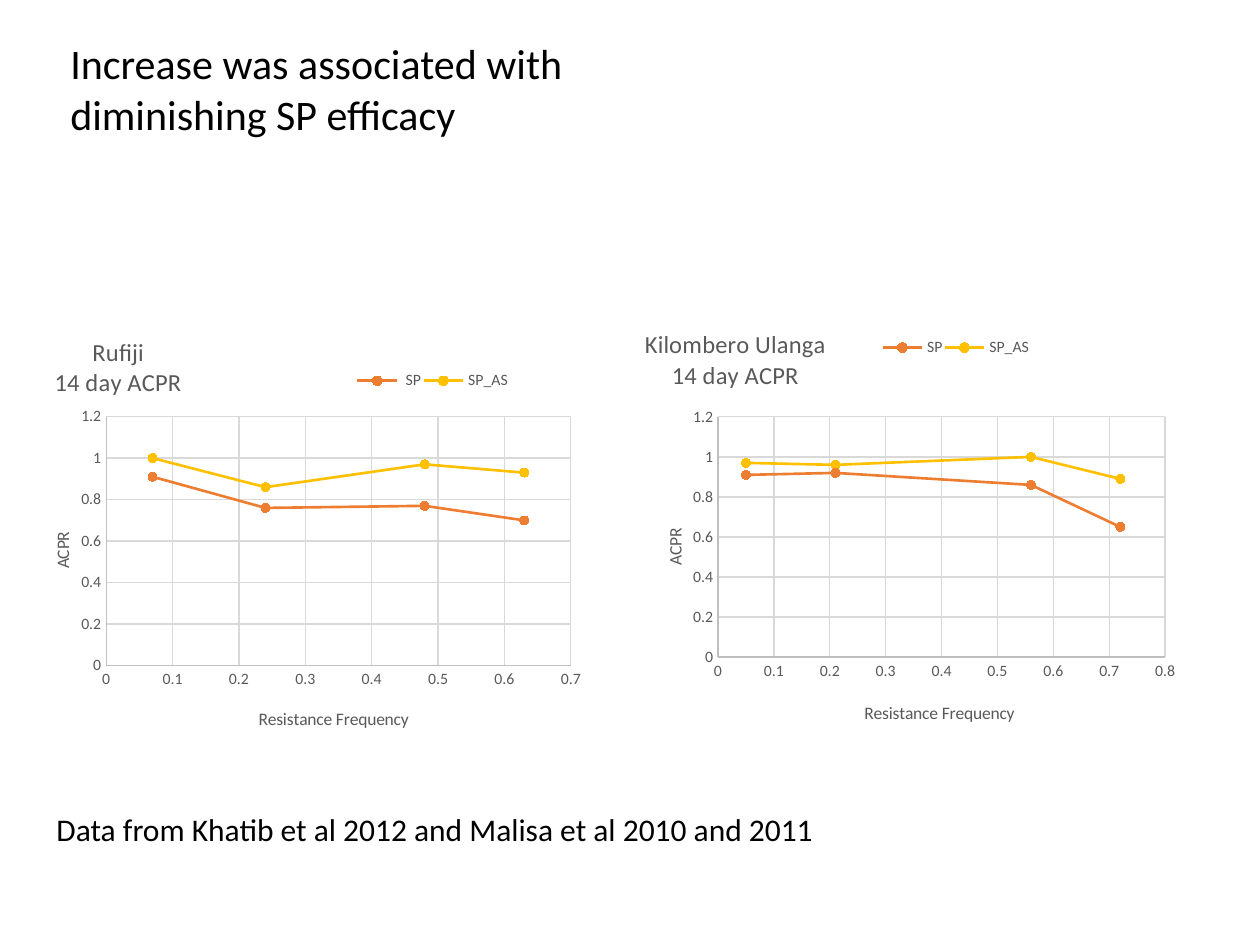
"""Build the slide comparing SP efficacy with resistance frequency at two sites."""
from lxml.etree import SubElement
from pptx import Presentation
from pptx.chart.data import XyChartData
from pptx.dml.color import RGBColor
from pptx.enum.chart import XL_CHART_TYPE, XL_LEGEND_POSITION, XL_MARKER_STYLE, XL_TICK_MARK
from pptx.enum.text import MSO_AUTO_SIZE
from pptx.oxml.ns import qn
from pptx.util import Inches, Pt

THEME = {
    "font": "Calibri",
    "ink": "000000", "label": "595959", "axis": "BFBFBF", "grid": "D9D9D9",
    "series": ("ED7D31", "FFC000"),
    "heading": 24, "source": 18, "chart_title": 14, "axis_title": 10, "tick": 9,
}
TEXTS = [
    ("Increase was associated with diminishing SP efficacy", (0.46, 0.25, 5, 0.91), "heading", True),
    ("Data from Khatib et al 2012 and Malisa et al 2010 and 2011", (0.35, 6.38, 7, 0.37), "source", False),
]
AXIS_TITLES = {"x": ("Resistance Frequency", (0.415, 0.825)), "y": ("ACPR", (0.055, 0.457))}
CHARTS = [
    {
        "title": "Kilombero Ulanga\n14 day ACPR",
        "frame": (5, 2.46, 4.42, 3.74),
        "frequency": (0.05, 0.21, 0.56, 0.72),
        "series": {"SP": (0.91, 0.92, 0.86, 0.65), "SP_AS": (0.97, 0.96, 1, 0.89)},
        "x_max": 0.8,
        "title_at": (0.02, 0.03),
        "legend_at": (0.45, 0.05, 0.27, 0.06),
        "plot_at": (0.158, 0.227, 0.803, 0.51),
    },
    {
        "title": "Rufiji\n14 day ACPR",
        "frame": (0.13, 2.46, 4.57, 3.8),
        "frequency": (0.07, 0.24, 0.48, 0.63),
        "series": {" SP": (0.91, 0.76, 0.77, 0.7), "SP_AS": (1, 0.86, 0.97, 0.93)},
        "x_max": 0.7,
        "title_at": (0.06, 0.045),
        "legend_at": (0.588, 0.118, 0.27, 0.06),
        "plot_at": (0.156, 0.223, 0.807, 0.52),
    },
]


def style_font(font, size, color):
    font.name = THEME["font"]
    font.size = Pt(THEME[size])
    font.bold = False
    font.color.rgb = RGBColor.from_string(THEME[color])


def style_line(line, color, width):
    line.color.rgb = RGBColor.from_string(color)
    line.width = Pt(width)


def add_text(page, text, *, frame, size, wrap):
    box = page.shapes.add_textbox(*map(Inches, frame))
    box.text_frame.word_wrap = wrap
    box.text_frame.auto_size = MSO_AUTO_SIZE.SHAPE_TO_FIT_TEXT
    span = box.text_frame.paragraphs[0].add_run()
    span.text = text
    style_font(span.font, size, "ink")


def set_layout(element, position, previous=None):
    for old in element.findall(qn("c:layout")):
        element.remove(old)
    layout = SubElement(element, qn("c:layout"))
    manual = SubElement(layout, qn("c:manualLayout"))
    settings = [("layoutTarget", "inner")] if previous is None else []
    settings += [("xMode", "edge"), ("yMode", "edge"), *zip("xywh", position)]
    for name, value in settings:
        SubElement(manual, qn(f"c:{name}")).set("val", str(value))
    if previous is None:
        element.insert(0, layout)
    else:
        element.find(qn(previous)).addnext(layout)


def set_title(title, text, *, size, position):
    title.text_frame.text = text
    for para in title.text_frame.paragraphs:
        for span in para.runs:
            style_font(span.font, size, "label")
    set_layout(title._element, position, "c:tx")


def format_axis(axis, name, *, maximum, step):
    text, position = AXIS_TITLES[name]
    set_title(axis.axis_title, text, size="axis_title", position=position)
    axis.minimum_scale, axis.maximum_scale, axis.major_unit = 0, maximum, step
    axis.major_tick_mark = axis.minor_tick_mark = XL_TICK_MARK.NONE
    style_font(axis.tick_labels.font, "tick", "label")
    style_line(axis.format.line, THEME["axis"], 0.75)
    axis.has_major_gridlines = True
    style_line(axis.major_gridlines.format.line, THEME["grid"], 0.75)


def add_scatter(page, content):
    data = XyChartData()
    for name, values in content["series"].items():
        series = data.add_series(name)
        for point in zip(content["frequency"], values):
            series.add_data_point(*point)
    frame = map(Inches, content["frame"])
    chart = page.shapes.add_chart(XL_CHART_TYPE.XY_SCATTER_LINES, *frame, data).chart
    style_font(chart.font, "axis_title", "ink")
    set_title(chart.chart_title, content["title"], size="chart_title", position=content["title_at"])
    format_axis(chart.category_axis, "x", maximum=content["x_max"], step=0.1)
    format_axis(chart.value_axis, "y", maximum=1.2, step=0.2)

    chart.has_legend = True
    chart.legend.position = XL_LEGEND_POSITION.BOTTOM
    chart.legend.include_in_layout = False
    style_font(chart.legend.font, "tick", "label")
    set_layout(chart.legend._element, content["legend_at"], "c:legendPos")

    plot = chart.plots[0]
    plot.vary_by_categories = False
    set_layout(plot._element.getparent(), content["plot_at"])
    for series, color in zip(plot.series, THEME["series"]):
        series.smooth = False
        style_line(series.format.line, color, 1.5)
        series.marker.style = XL_MARKER_STYLE.CIRCLE
        series.marker.size = 5
        series.marker.format.fill.solid()
        series.marker.format.fill.fore_color.rgb = RGBColor.from_string(color)
        style_line(series.marker.format.line, color, 0.75)


def main():
    deck = Presentation()
    deck.slide_width, deck.slide_height = Inches(10), Inches(7.5)
    page = deck.slides.add_slide(deck.slide_layouts[6])
    for content in CHARTS:
        add_scatter(page, content)
    for text, frame, size, wrap in TEXTS:
        add_text(page, text, frame=frame, size=size, wrap=wrap)
    deck.save("out.pptx")


if __name__ == "__main__":
    main()
